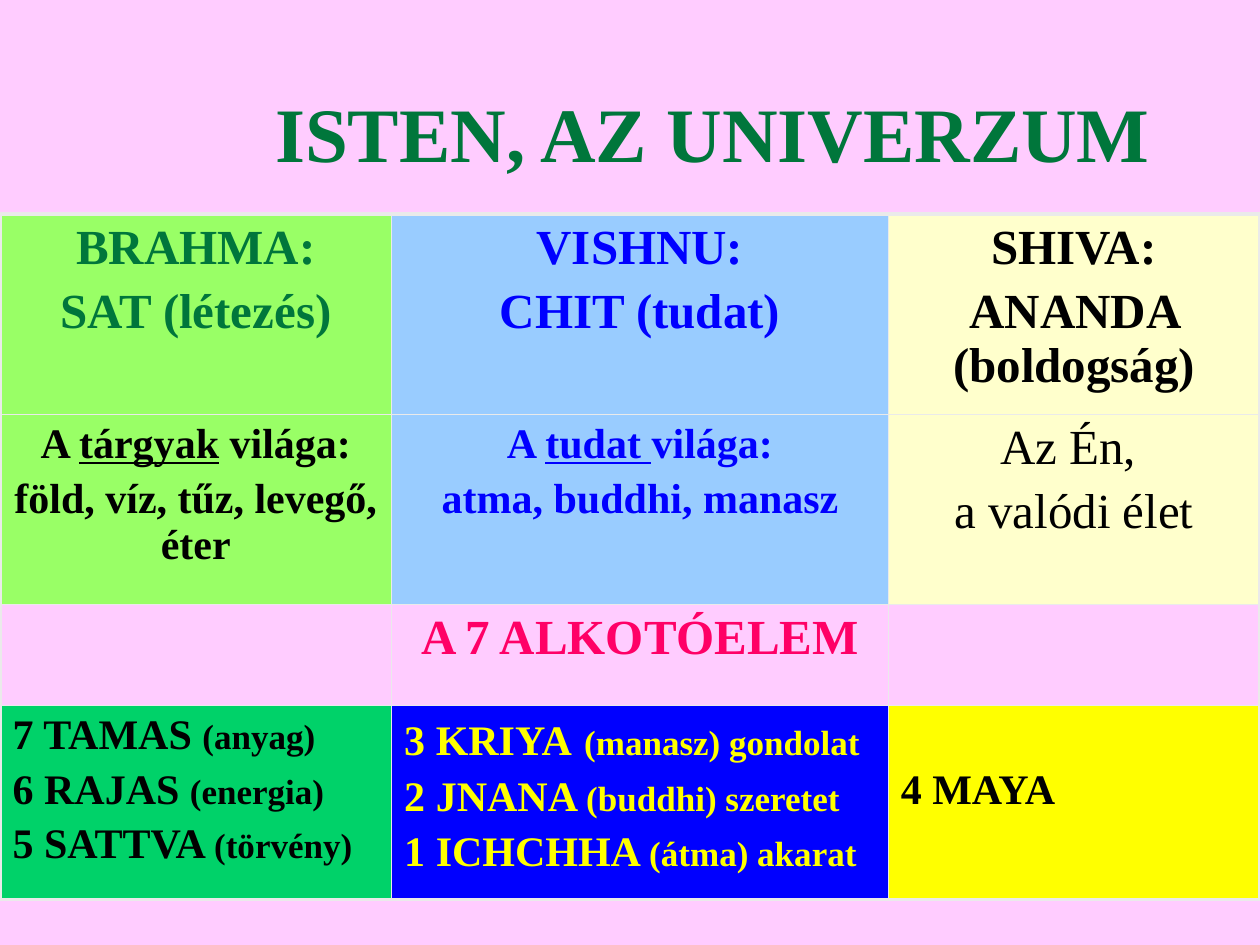
from pptx import Presentation
from pptx.util import Pt
from pptx.dml.color import RGBColor as RGB
from pptx.enum.text import PP_ALIGN as AL, MSO_ANCHOR as ANC
from pptx.oxml import parse_xml
from pptx.oxml.ns import nsdecls

FONT = "Times New Roman"
PINK = RGB(0xFF, 0xCC, 0xFF)
GREEN = RGB(0x00, 0x76, 0x3B)
BLUE = RGB(0x00, 0x00, 0xFF)
BLACK = RGB(0x00, 0x00, 0x00)
ROSE = RGB(0xFF, 0x00, 0x66)
YELLOW = RGB(0xFF, 0xFF, 0x00)
LIME = RGB(0x99, 0xFF, 0x66)
SKY = RGB(0x99, 0xCC, 0xFF)
CREAM = RGB(0xFF, 0xFF, 0xCC)
JADE = RGB(0x00, 0xD2, 0x69)
EDGE = RGB(0xEA, 0xEA, 0xEA)


def style(run, size, color, bold=True):
    font = run.font
    font.name, font.size, font.bold = FONT, Pt(size), bold
    font.color.rgb = color


def border(cell, side, width):
    cell._tc.get_or_add_tcPr().append(parse_xml(
        f'<a:{side} {nsdecls("a")} w="{Pt(width)}"><a:solidFill>'
        f'<a:srgbClr val="{EDGE}"/></a:solidFill></a:{side}>'))


deck = Presentation()
deck.slide_width, deck.slide_height = Pt(720), Pt(540)
slide = deck.slides.add_slide(deck.slide_layouts[5])
slide.background.fill.solid()
slide.background.fill.fore_color.rgb = PINK

# Title
title = slide.shapes.title
title.left, title.top, title.width, title.height = Pt(150), Pt(18), Pt(558), Pt(114)
frame = title.text_frame
frame.text = "ISTEN, AZ UNIVERZUM"
frame.vertical_anchor = ANC.MIDDLE
frame.paragraphs[0].alignment = AL.LEFT
style(frame.paragraphs[0].runs[0], 44, GREEN)

# Each cell: fill, text colour, paragraphs made of (text, size) runs
rows = [
    [(LIME, GREEN, [[("BRAHMA:", 28)], [("SAT (létezés)", 28)]]),
     (SKY, BLUE, [[("VISHNU:", 28)], [("CHIT (tudat)", 28)]]),
     (CREAM, BLACK, [[("SHIVA:", 28)], [("ANANDA (boldogság)", 28)]])],
    [(LIME, BLACK, [[("A ", 24), ("tárgyak", 24), (" világa:", 24)],
                    [("föld, víz, tűz, levegő, éter", 24)]]),
     (SKY, BLUE, [[("A ", 24), ("tudat ", 24), ("világa:", 24)],
                  [("atma, buddhi, manasz", 24)]]),
     (CREAM, BLACK, [[("Az Én, ", 28)], [("a valódi élet", 28)]])],
    [(PINK, ROSE, []),
     (PINK, ROSE, [[("A 7 ALKOTÓELEM", 28)]]),
     (PINK, ROSE, [])],
    [(JADE, BLACK, [[("7 TAMAS ", 24), ("(anyag)", 20)],
                    [("6 RAJAS ", 24), ("(energia)", 20)],
                    [("5 SATTVA ", 24), ("(törvény)", 20)]]),
     (BLUE, YELLOW, [[("3 KRIYA", 24), (" ", 28), ("(manasz) gondolat", 20)],
                     [("2 JNANA ", 24), ("(buddhi) szeretet", 20)],
                     [("1 ICHCHHA ", 24), ("(átma) akarat", 20)]]),
     (YELLOW, BLACK, [[("4 MAYA", 24)]])],
]
widths = [223.8, 283.8, 212.4]
heights = [114.5, 108.7, 57.6, 110.9]

# Table
table = slide.shapes.add_table(4, 3, Pt(0), Pt(122.4), Pt(720), Pt(sum(heights))).table
table.first_row = table.horz_banding = False
for col, width in zip(table.columns, widths):
    col.width = Pt(width)
for row, height in zip(table.rows, heights):
    row.height = Pt(height)

for r, row in enumerate(rows):
    for c, (fill, color, paras) in enumerate(row):
        cell = table.cell(r, c)
        # Thick outer edges, thin inner ones
        for side, outer in (("lnL", c == 0), ("lnR", c == 2),
                            ("lnT", r == 0), ("lnB", r == 3)):
            border(cell, side, 2.25 if outer else 1)
        cell.fill.solid()
        cell.fill.fore_color.rgb = fill
        for i, runs in enumerate(paras):
            frame = cell.text_frame
            para = frame.paragraphs[0] if i == 0 else frame.add_paragraph()
            para.alignment = AL.LEFT if r == 3 else AL.CENTER
            if i:
                para.space_before = Pt(0.2 * runs[0][1])
            for text, size in runs:
                run = para.add_run()
                run.text = text
                style(run, size, color, (r, c) != (1, 2))

# Underlined keywords, and the last cell level with the second line beside it
for c in (0, 1):
    table.cell(1, c).text_frame.paragraphs[0].runs[1].font.underline = True
table.cell(3, 2).margin_top = Pt(35)

deck.save("out.pptx")
